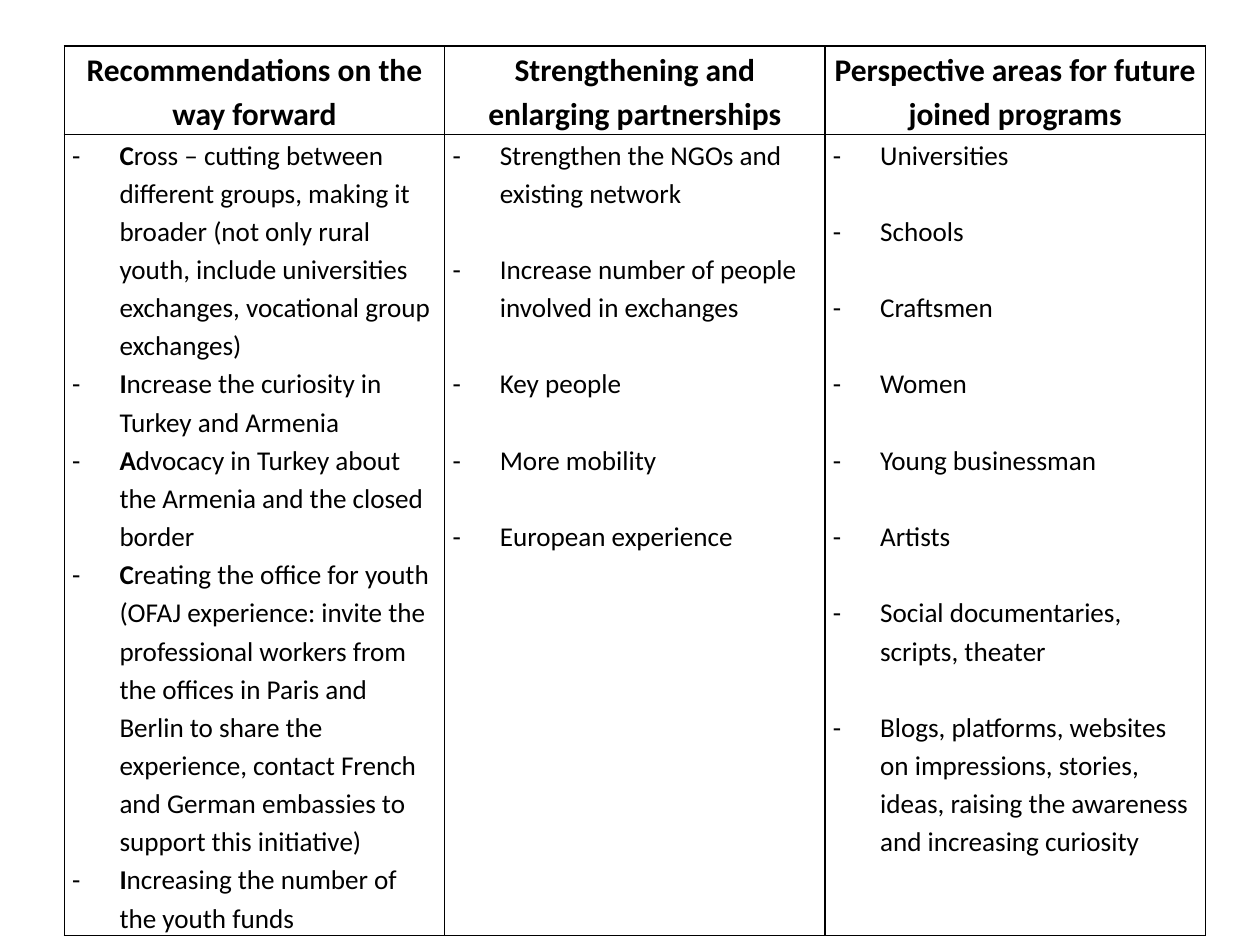
from pptx import Presentation
from pptx.dml.color import RGBColor
from pptx.enum.text import PP_ALIGN as Align
from pptx.oxml import parse_xml
from pptx.oxml.ns import nsdecls
from pptx.util import Pt

# Content: heading, items, bold initials, gap between items
COLUMNS = [
    ("Recommendations on the way forward", [
        "Cross – cutting between different groups, making it broader (not only rural youth, "
        "include universities exchanges, vocational group exchanges)",
        "Increase the curiosity in Turkey and Armenia",
        "Advocacy in Turkey about the Armenia and the closed border",
        "Creating the office for youth (OFAJ experience: invite the professional workers from "
        "the offices in Paris and Berlin to share the experience, contact French and German "
        "embassies to support this initiative)",
        "Increasing the number of the youth funds",
    ], True, 0),
    ("Strengthening and enlarging partnerships", [
        "Strengthen the NGOs and existing network",
        "Increase number of people involved in exchanges",
        "Key people",
        "More mobility",
        "European experience",
    ], False, 21.8),
    ("Perspective areas for future joined programs", [
        "Universities",
        "Schools",
        "Craftsmen",
        "Women",
        "Young businessman",
        "Artists",
        "Social documentaries, scripts, theater",
        "Blogs, platforms, websites on impressions, stories, ideas, raising the awareness "
        "and increasing curiosity",
    ], False, 21.8),
]
LEFT, TOP, COLUMN_WIDTH = 36.8, 26.2, 217.35
ROW_HEIGHTS = (50.3, 457.5)
HEADING_SIZE, ITEM_SIZE, INDENT = 18, 15.5, 27
MARGINS = {"margin_left": 4.5, "margin_right": 4.5, "margin_top": 0, "margin_bottom": 0}
BLACK = "000000"


def color(hex_value):
    return RGBColor.from_string(hex_value)


def add_run(paragraph, text, size, bold):
    run = paragraph.add_run()
    run.text = text
    for name, value in {"name": "Calibri", "size": Pt(size), "bold": bold}.items():
        setattr(run.font, name, value)
    run.font.color.rgb = color(BLACK)


def format_cell(cell):
    for name, value in MARGINS.items():
        setattr(cell, name, Pt(value))
    properties = cell._tc.get_or_add_tcPr()
    for side in ("lnL", "lnR", "lnT", "lnB"):
        properties.append(parse_xml(
            f'<a:{side} {nsdecls("a")} w="{Pt(1)}"><a:solidFill>'
            f'<a:srgbClr val="{BLACK}"/></a:solidFill></a:{side}>'))
    cell.fill.background()


def add_dash(paragraph):
    properties = paragraph._p.get_or_add_pPr()
    properties.set("marL", str(Pt(INDENT)))
    properties.set("indent", str(-Pt(INDENT)))
    for bullet in ('buFont typeface="Calibri"', 'buChar char="-"'):
        tag, attribute = bullet.split(" ")
        properties.append(parse_xml(f'<a:{tag} {nsdecls("a")} {attribute}/>'))


deck = Presentation()
deck.slide_width, deck.slide_height = Pt(720), Pt(540)
slide = deck.slides.add_slide(deck.slide_layouts[6])

# Table grid
table = slide.shapes.add_table(
    len(ROW_HEIGHTS), len(COLUMNS), Pt(LEFT), Pt(TOP),
    Pt(COLUMN_WIDTH * len(COLUMNS)), Pt(sum(ROW_HEIGHTS))).table
table.horz_banding = False
table.first_row = False
for row, height in zip(table.rows, ROW_HEIGHTS):
    row.height = Pt(height)

for index, (heading, items, bold_initial, gap) in enumerate(COLUMNS):
    table.columns[index].width = Pt(COLUMN_WIDTH)
    heading_cell, items_cell = table.cell(0, index), table.cell(1, index)
    format_cell(heading_cell)
    format_cell(items_cell)

    # Heading
    title = heading_cell.text_frame.paragraphs[0]
    title.alignment = Align.CENTER
    title.line_spacing = 1.15
    add_run(title, heading, HEADING_SIZE, True)

    # Dashed list
    frame = items_cell.text_frame
    for number, item in enumerate(items):
        entry = frame.add_paragraph() if number else frame.paragraphs[0]
        entry.line_spacing = 1.15
        entry.space_before = Pt(gap if number else 0)
        add_dash(entry)
        if bold_initial:
            add_run(entry, item[0], ITEM_SIZE, True)
            item = item[1:]
        add_run(entry, item, ITEM_SIZE, False)

deck.save("out.pptx")
